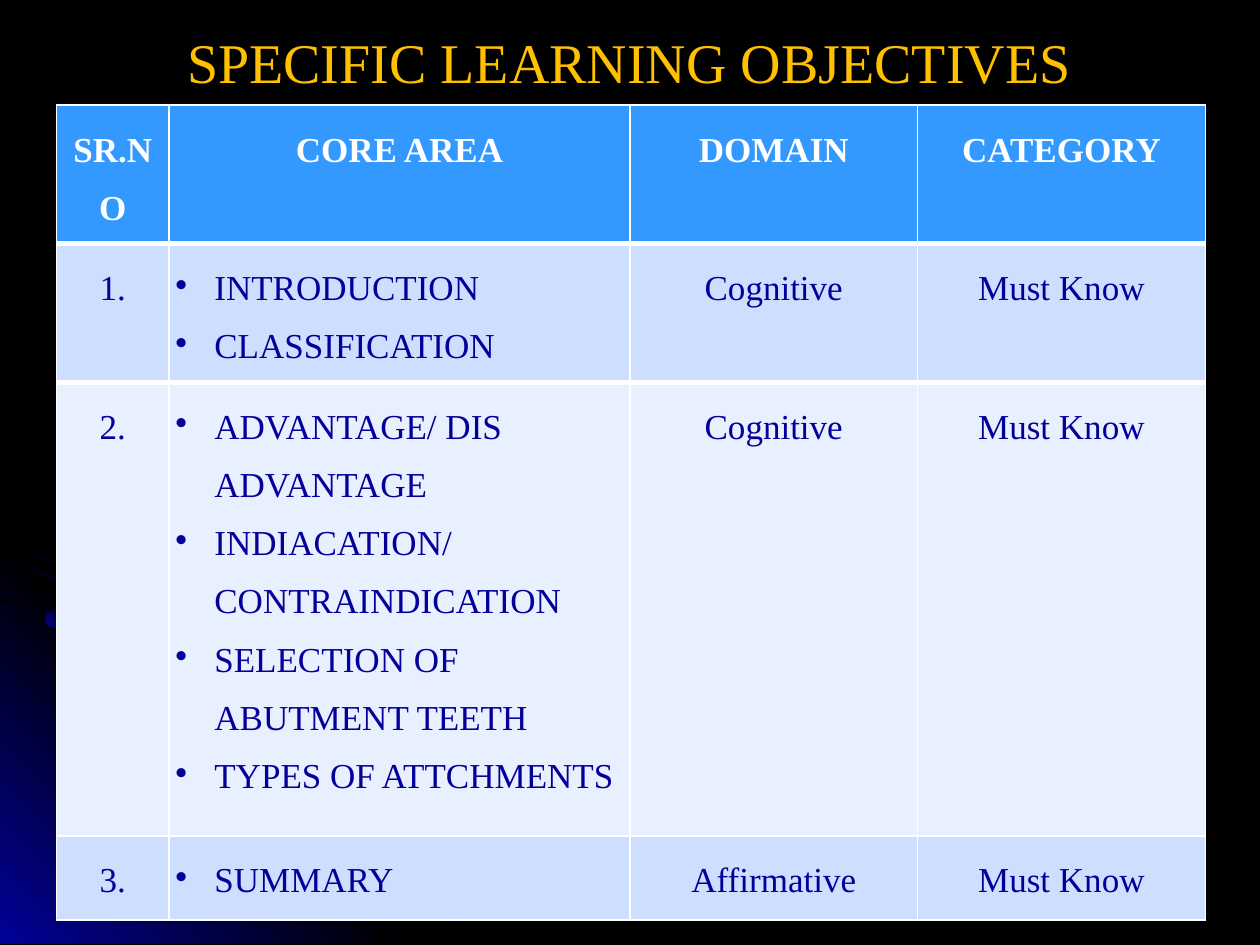
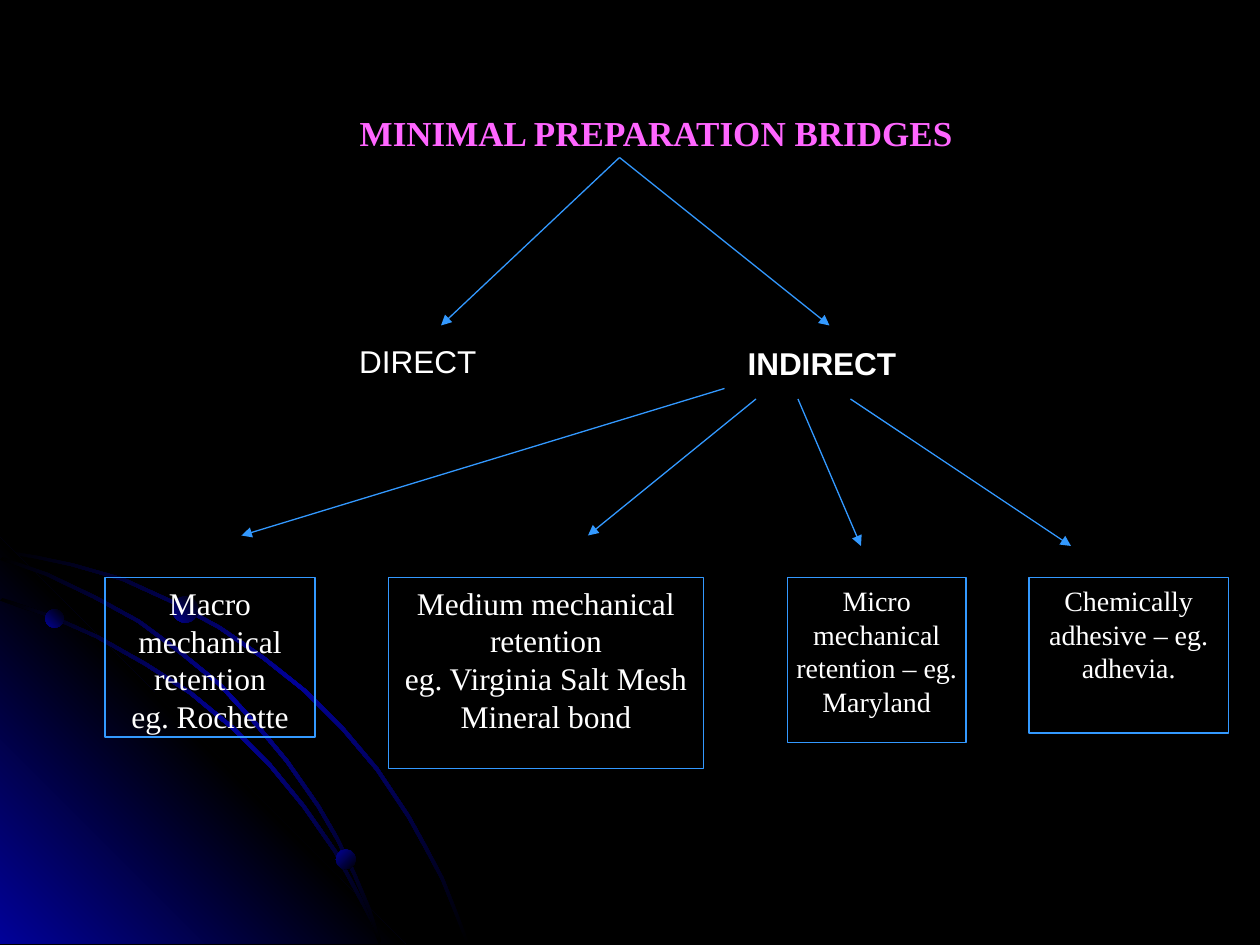
import dataclasses

import pptx
import pptx.dml.color
import pptx.enum.shapes
import pptx.enum.text
import pptx.oxml
import pptx.oxml.ns
import pptx.util

Pt = pptx.util.Pt
SHAPE = pptx.enum.shapes.MSO_SHAPE
ALIGN = pptx.enum.text.PP_ALIGN
ANCHOR = pptx.enum.text.MSO_ANCHOR
SPACE = pptx.oxml.ns.nsdecls("a")

COLS, ROWS = 120, 90
CELL = pptx.util.Inches(10) / COLS


@dataclasses.dataclass(frozen=True)
class Theme:
    back: str = "000000"
    navy: str = "010199"
    sky: str = "3399FF"
    white: str = "FFFFFF"
    gold: str = "FFC000"
    pink: str = "FF66FF"
    bands: tuple = ("CDDEFF", "E8EFFF")
    serif: str = "Times New Roman"
    sans: str = "Arial"
    head: int = 32
    mid: int = 20
    body: int = 18
    small: int = 16
    inset: float = 3.6
    hair: float = 0.75


THEME = Theme()

# Lower edges of the three arcs, in grid cells
ARCS = (
    ((0, 52.6), (3.4, 53.2), (6.7, 53.9), (11.6, 55.3), (16.2, 57.4),
     (20.8, 59.9), (25, 62.8), (28.9, 65.9), (32.5, 69.5), (35.8, 73.4),
     (38.8, 77.9), (40.4, 80.8), (42, 83.8), (43.2, 86.8), (44.4, 89.9)),
    ((0, 57.2), (4.7, 58.8), (9.2, 60.8), (13.8, 63.4), (18, 66.1),
     (22, 69.4), (25.6, 73), (28.8, 76.9), (31.8, 81.2), (34.2, 85.7),
     (35.3, 87.8), (36.1, 89.9)),
    ((0, 53.3), (4.3, 54.8), (8.9, 57), (13.1, 59.3), (17, 62.2),
     (20.8, 65.3), (24.2, 69), (27.2, 72.6), (30.2, 76.9), (32, 80),
     (33.6, 83.3), (35, 86.6), (36.1, 89.9)),
)
WEDGE = ((0, 51.2), (38.6, 89.9), (0, 89.9))
DOTS = ((4.3, 58, 1.8, 135), (32, 80.9, 1.9, 225), (16.4, 56.8, 2.5, 135))

WIDTHS = (10.7, 43.9, 27.4, 27.4)
HEIGHTS = (13.2, 13.2, 43.2, 8)
HEADS = ("SR.NO", "CORE AREA", "DOMAIN", "CATEGORY")
GOALS = (
    ("1.", ("INTRODUCTION", "CLASSIFICATION"), "Cognitive", "Must Know"),
    ("2.", ("ADVANTAGE/ DIS ADVANTAGE", "INDIACATION/ CONTRAINDICATION",
            "SELECTION OF ABUTMENT TEETH", "TYPES OF ATTCHMENTS"),
     "Cognitive", "Must Know"),
    ("3.", ("SUMMARY",), "Affirmative", "Must Know"),
)

TYPES = (
    ((10, 55, 20, 15.2), THEME.body,
     ("Macro mechanical retention", "eg. Rochette")),
    ((37, 55, 30, 18.2), THEME.body,
     ("Medium mechanical retention", "eg. Virginia Salt Mesh Mineral bond")),
    ((75, 55, 17, 15.7), THEME.small,
     ("Micro mechanical retention – eg. Maryland",)),
    ((98, 55, 19, 14.8), THEME.small,
     ("Chemically adhesive – eg. adhevia.",)),
)
ARROWS = (
    ((59, 15), (42, 31)), ((59, 15), (79, 31)),
    ((81, 38), (102, 52)), ((72, 38), (56, 51)),
    ((69, 37), (23, 51)), ((76, 38), (82, 52)),
)


def grid(*cells):
    """Turn grid cells into slide lengths."""
    return [pptx.util.Emu(round(n * CELL)) for n in cells]


def rgb(code):
    return pptx.dml.color.RGBColor.from_string(code)


def put(thing, values):
    for name, value in values.items():
        setattr(thing, name, value)


def write(frame, lines, size, color, font=THEME.serif, bold=False,
          align=ALIGN.CENTER, anchor=ANCHOR.TOP):
    sides = ("left", "top", "right", "bottom")
    put(frame, {"margin_" + side: Pt(THEME.inset) for side in sides})
    put(frame, {"word_wrap": True, "vertical_anchor": anchor,
                "auto_size": pptx.enum.text.MSO_AUTO_SIZE.NONE})
    for n, line in enumerate(lines):
        para = frame.add_paragraph() if n else frame.paragraphs[0]
        para.alignment = align
        run = para.add_run()
        run.text = line
        put(run.font, {"size": Pt(size), "name": font, "bold": bold})
        run.font.color.rgb = rgb(color)


def title(slide, text, box, size, color, **style):
    shape = slide.shapes.title
    put(shape, dict(zip(("left", "top", "width", "height"), grid(*box))))
    write(shape.text_frame, [text], size, color, **style)


def label(slide, text, box, **style):
    shape = slide.shapes.add_textbox(*grid(*box))
    write(shape.text_frame, [text], THEME.body, THEME.white, THEME.sans,
          align=ALIGN.LEFT, **style)


def frame(slide, box, size, lines):
    """Draw an outlined box with centred text."""
    shape = slide.shapes.add_shape(SHAPE.RECTANGLE, *grid(*box))
    shape.shadow.inherit = False
    shape.fill.background()
    shape.line.color.rgb = rgb(THEME.sky)
    shape.line.width = Pt(THEME.hair)
    write(shape.text_frame, lines, size, THEME.white)


def arrow(slide, start, end):
    line = slide.shapes.add_connector(
        pptx.enum.shapes.MSO_CONNECTOR.STRAIGHT, *grid(*start, *end))
    line.line.color.rgb = rgb(THEME.sky)
    line.line.width = Pt(THEME.hair)
    line.line._get_or_add_ln().append(
        pptx.oxml.parse_xml(f'<a:tailEnd {SPACE} type="triangle"/>'))
    line.element.spPr.append(pptx.oxml.parse_xml(f"<a:effectLst {SPACE}/>"))


def blend(shape, colors, angle):
    """Fill with evenly spaced gradient stops and no outline."""
    shape.shadow.inherit = False
    shape.line.fill.background()
    shape.fill.background()
    step = 100000 // (len(colors) - 1)
    stops = "".join(
        f'<a:gs pos="{n * step}"><a:srgbClr val="{color}"/></a:gs>'
        for n, color in enumerate(colors))
    node = pptx.oxml.parse_xml(
        f'<a:gradFill {SPACE} rotWithShape="1"><a:gsLst>{stops}</a:gsLst>'
        f'<a:lin ang="{angle * 60000}" scaled="0"/></a:gradFill>')
    props = shape.element.spPr
    props.replace(props.find(pptx.oxml.ns.qn("a:noFill")), node)
    return shape


def trace(slide, points):
    first, *rest = [grid(*point) for point in points]
    pen = slide.shapes.build_freeform(*first)
    pen.add_line_segments(rest, close=True)
    return pen.convert_to_shape()


def ribbon(slide, edge):
    upper = [(x + 0.24, y - 0.24) for x, y in reversed(edge)]
    return blend(trace(slide, [*edge, *upper]),
                 (THEME.back, THEME.navy, THEME.back), 225)


def decorate(deck, slide):
    """Draw the corner art once and move it to the master."""
    master = deck.slide_master
    master.background.fill.solid()
    master.background.fill.fore_color.rgb = rgb(THEME.back)
    art = [ribbon(slide, ARCS[0]),
           blend(trace(slide, WEDGE),
                 (THEME.navy, THEME.back, THEME.navy), 135)]
    art += [ribbon(slide, edge) for edge in ARCS[1:]]
    for x, y, size, angle in DOTS:
        dot = slide.shapes.add_shape(SHAPE.OVAL, *grid(x, y, size, size))
        art.append(blend(dot, (THEME.back, THEME.navy), angle))
    for n, shape in enumerate(art):
        shape.element.xpath(".//p:cNvPr")[0].set("id", str(100 + n))
        master.shapes.element.insert(2 + n, shape.element)


def border(cell, top, bottom):
    props = cell._tc.get_or_add_tcPr()
    for n, (side, width) in enumerate(
            (("L", 1), ("R", 1), ("T", top), ("B", bottom))):
        props.insert(n, pptx.oxml.parse_xml(
            f'<a:ln{side} {SPACE} w="{Pt(width)}"><a:solidFill>'
            f'<a:srgbClr val="{THEME.white}"/></a:solidFill></a:ln{side}>'))


def bullet(para):
    props = para._p.get_or_add_pPr()
    indent = pptx.util.Inches(0.31)
    props.set("marL", str(indent))
    props.set("indent", str(-indent))
    props.append(pptx.oxml.parse_xml(f'<a:buChar {SPACE} char="•"/>'))


def fill(cell, value, row):
    """Write one table cell; a tuple becomes a bulleted list."""
    head, listed = row == 0, isinstance(value, tuple)
    cell.fill.solid()
    cell.fill.fore_color.rgb = rgb(
        THEME.sky if head else THEME.bands[(row - 1) % 2])
    border(cell, 3 if row in (1, 2) else 1, 3 if row in (0, 1) else 1)
    write(cell.text_frame, value if listed else [value], THEME.mid,
          THEME.white if head else THEME.navy, bold=head,
          align=ALIGN.LEFT if listed else ALIGN.CENTER)
    put(cell, {"margin_" + side: Pt(THEME.inset)
               for side in ("left", "top", "right", "bottom")})
    for para in cell.text_frame.paragraphs:
        para.line_spacing = 1.5
        if listed:
            bullet(para)


def table(slide, left, top):
    rows = (HEADS, *GOALS)
    box = grid(left, top, sum(WIDTHS), sum(HEIGHTS))
    sheet = slide.shapes.add_table(len(rows), len(HEADS), *box).table
    for col, width in zip(sheet.columns, grid(*WIDTHS)):
        col.width = width
    for n, height in enumerate(grid(*HEIGHTS)):
        sheet.rows[n].height = height
        for col, value in enumerate(rows[n]):
            fill(sheet.cell(n, col), value, n)


def goals(slide):
    title(slide, "SPECIFIC LEARNING OBJECTIVES", (9, 0.7, 101.9, 10.3),
          THEME.head, THEME.gold, anchor=ANCHOR.MIDDLE)
    table(slide, 5.4, 10)


def bridges(slide):
    for box, size, lines in TYPES:
        frame(slide, box, size, lines)
    title(slide, "MINIMAL PREPARATION BRIDGES", (27.6, 10, 69.8, 11.2),
          THEME.mid, THEME.pink, bold=True)
    label(slide, "DIRECT", (33.6, 32, 18.8, 4.6))
    label(slide, "INDIRECT", (70.6, 32.2, 27.8, 4.6), bold=True)
    for start, end in ARROWS:
        arrow(slide, start, end)


def main():
    deck = pptx.Presentation()
    deck.slide_width, deck.slide_height = grid(COLS, ROWS)
    layout = deck.slide_layouts.get_by_name("Title Only")
    first, second = [deck.slides.add_slide(layout) for _ in range(2)]
    decorate(deck, first)
    goals(first)
    bridges(second)
    deck.save("out.pptx")


if __name__ == "__main__":
    main()
